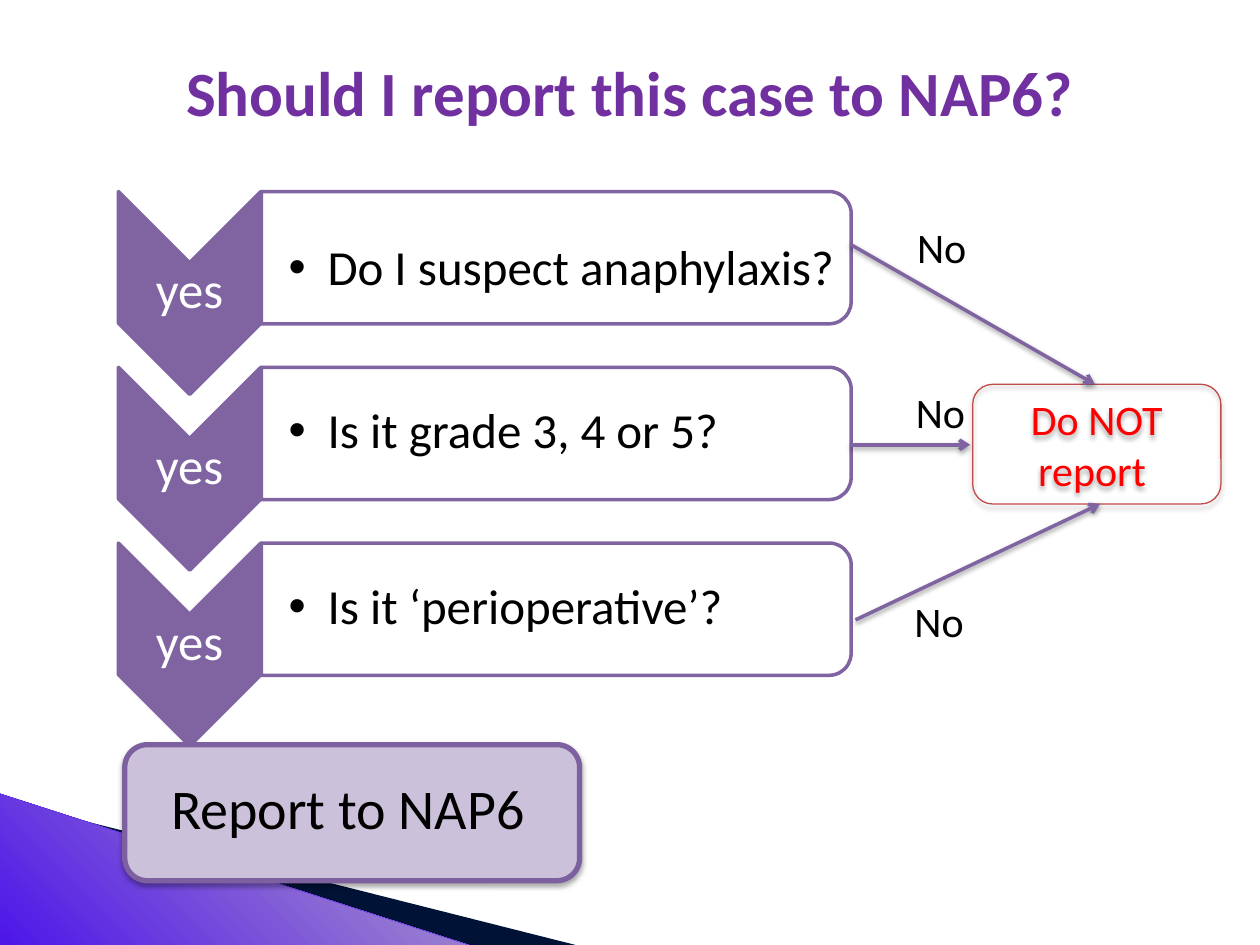
from lxml.etree import SubElement
from pptx import Presentation
from pptx.dml.color import RGBColor
from pptx.enum.shapes import MSO_CONNECTOR, MSO_SHAPE
from pptx.enum.text import MSO_ANCHOR, PP_ALIGN
from pptx.oxml.ns import qn
from pptx.util import Inches, Pt

COLORS = {
    "navy": "001236", "violet": "4D15E9", "mauve": "B3A2C7", "edge": "612EEC",
    "title": "7030A0", "purple": "8064A2", "lilac": "CCC1DA", "frame": "7D60A0",
    "red": "FF0000", "brick": "BF4C48", "white": "FFFFFF", "black": "000000",
}
COLUMNS, ROWS = 100, 75


def rgb(name):
    return RGBColor.from_string(COLORS[name])


def write(tf, text, size=24, color="black", bold=False, align=PP_ALIGN.LEFT,
          anchor=MSO_ANCHOR.TOP, wrap=True, insets=None, spacing=None, bullet=False):
    tf.word_wrap = wrap
    tf.vertical_anchor = anchor
    if insets:
        tf.margin_left, tf.margin_top, tf.margin_right, tf.margin_bottom = map(Inches, insets)
    for i, line in enumerate(text.split("\n")):
        p = tf.paragraphs[0] if i == 0 else tf.add_paragraph()
        if bullet:
            pPr = p._p.get_or_add_pPr()
            pPr.set("marL", str(Inches(0.31)))
            pPr.set("indent", str(-Inches(0.31)))
            SubElement(pPr, qn("a:buFont"), typeface="Arial")
            SubElement(pPr, qn("a:buChar"), char="•")
        p.alignment = align
        p.line_spacing = spacing
        r = p.add_run()
        r.text = line
        r.font.name, r.font.size, r.font.bold = "Calibri", Pt(size), bold
        r.font.color.rgb = rgb(color)


class Deck:
    """Draw styled elements on the current slide, measured in grid columns and rows."""

    def __init__(self):
        self.prs = Presentation()
        self.prs.slide_width, self.prs.slide_height = Inches(10), Inches(7.5)
        self.s = self.prs.slides.add_slide(self.prs.slide_layouts[6])

    def x(self, columns):
        return round(self.prs.slide_width * columns / COLUMNS)

    def y(self, rows):
        return round(self.prs.slide_height * rows / ROWS)

    def frame(self, left, top, width, height):
        return self.x(left), self.y(top), self.x(width), self.y(height)

    def effects(self, sp, alpha=None, dist=1.8):
        spPr = sp._element.spPr
        for old in spPr.findall(qn("a:effectLst")):
            spPr.remove(old)
        effects = SubElement(spPr, qn("a:effectLst"))
        if alpha:
            shadow = SubElement(effects, qn("a:outerShdw"), blurRad=str(Pt(3.1)),
                                dist=str(Pt(dist)), dir="5400000", rotWithShape="0")
            color = SubElement(shadow, qn("a:srgbClr"), val=COLORS["black"])
            SubElement(color, qn("a:alpha"), val=str(alpha * 1000))

    def paint(self, sp, fill=None, line=None, width=2, shadow=None):
        if isinstance(fill, tuple):
            sp.fill.gradient()
            sp.fill.gradient_angle = 45
            for stop, name in zip(sp.fill.gradient_stops, fill):
                stop.color.rgb = rgb(name)
        elif fill:
            sp.fill.solid()
            sp.fill.fore_color.rgb = rgb(fill)
        else:
            sp.fill.background()
        if line:
            sp.line.color.rgb = rgb(line)
            sp.line.width = Pt(width)
        else:
            sp.line.fill.background()
        self.effects(sp, shadow)

    def shape(self, kind, box, turned=False, **style):
        left, top, width, height = self.frame(*box)
        if turned:
            left, top = left + (width - height) // 2, top + (height - width) // 2
            width, height = height, width
        sp = self.s.shapes.add_shape(kind, left, top, width, height)
        sp.rotation = 90 if turned else 0
        self.paint(sp, **style)
        return sp

    def polygon(self, points, **style):
        start, *rest = [(self.x(a), self.y(b)) for a, b in points]
        builder = self.s.shapes.build_freeform(*start)
        builder.add_line_segments(rest, close=True)
        self.paint(builder.convert_to_shape(), **style)

    def text(self, box, text, **style):
        write(self.s.shapes.add_textbox(*self.frame(*box)).text_frame, text, **style)

    def arrow(self, x1, y1, x2, y2):
        sp = self.s.shapes.add_connector(
            MSO_CONNECTOR.STRAIGHT, self.x(x1), self.y(y1), self.x(x2), self.y(y2))
        sp.line.color.rgb = rgb("purple")
        sp.line.width = Pt(2)
        SubElement(sp.line._get_or_add_ln(), qn("a:tailEnd"), type="arrow")
        self.effects(sp, 38, 1.6)


def main():
    deck = Deck()
    middle = {"anchor": MSO_ANCHOR.MIDDLE}
    centred = {"align": PP_ALIGN.CENTER, **middle}

    deck.polygon([(5.7, 64.9), (46.1, 75.1), (37.6, 75.1), (5.8, 65)], fill="navy")
    deck.shape(MSO_SHAPE.RIGHT_TRIANGLE, (0, 63, 37.5, 12.1), fill=("violet", "mauve"),
               line="edge", width=0.25, shadow=35)
    deck.text((5, 1, 90, 12.5), "Should I report this case to NAP6?",
              size=36, color="title", bold=True, **centred)

    questions = [("Do I suspect anaphylaxis?", 1), ("Is it grade 3, 4 or 5?", 0),
                 ("Is it ‘perioperative’?", 0)]
    for i, (question, drop) in enumerate(questions):
        top = 15.2 + 13.95 * i
        deck.shape(MSO_SHAPE.CHEVRON, (9.4, top, 11.3, 16.1), turned=True,
                   fill="purple", line="purple")
        deck.text((9.4, top + 5.6, 11.3, 4.8), "yes", size=29, color="white",
                  insets=[0.02] * 4, spacing=0.9, **centred)
        deck.shape(MSO_SHAPE.ROUND_2_SAME_RECTANGLE, (20.75, top, 46.8, 10.5), turned=True,
                   fill="white", line="purple")
        deck.text((20.7, top + 0.5 + drop, 46.2, 9.4), question, size=28, bullet=True,
                  insets=(0.22, 0.02, 0.02, 0.02), spacing=0.9, **middle)

    deck.arrow(67.5, 35.3, 77, 35.3)
    sp = deck.shape(MSO_SHAPE.ROUNDED_RECTANGLE, (77.2, 30.5, 19.7, 9.5),
                    line="brick", width=0.75, shadow=35)
    write(sp.text_frame, "Do NOT\nreport ", color="red", **centred)
    deck.arrow(67.5, 19.4, 86.9, 30.5)
    deck.arrow(67.9, 49.2, 87.3, 40)

    deck.shape(MSO_SHAPE.ROUNDED_RECTANGLE, (9.9, 59.1, 36.1, 10.8),
               fill="lilac", line="frame", width=3, shadow=35)
    deck.text((12.6, 60.9, 42.1, 6.4), "Report to NAP6", size=32)
    for left, top in ((71.6, 46.8), (71.7, 30.2), (71.8, 17.1)):
        deck.text((left, top, 6, 5), "No", wrap=False)

    deck.prs.save("out.pptx")


if __name__ == "__main__":
    main()
